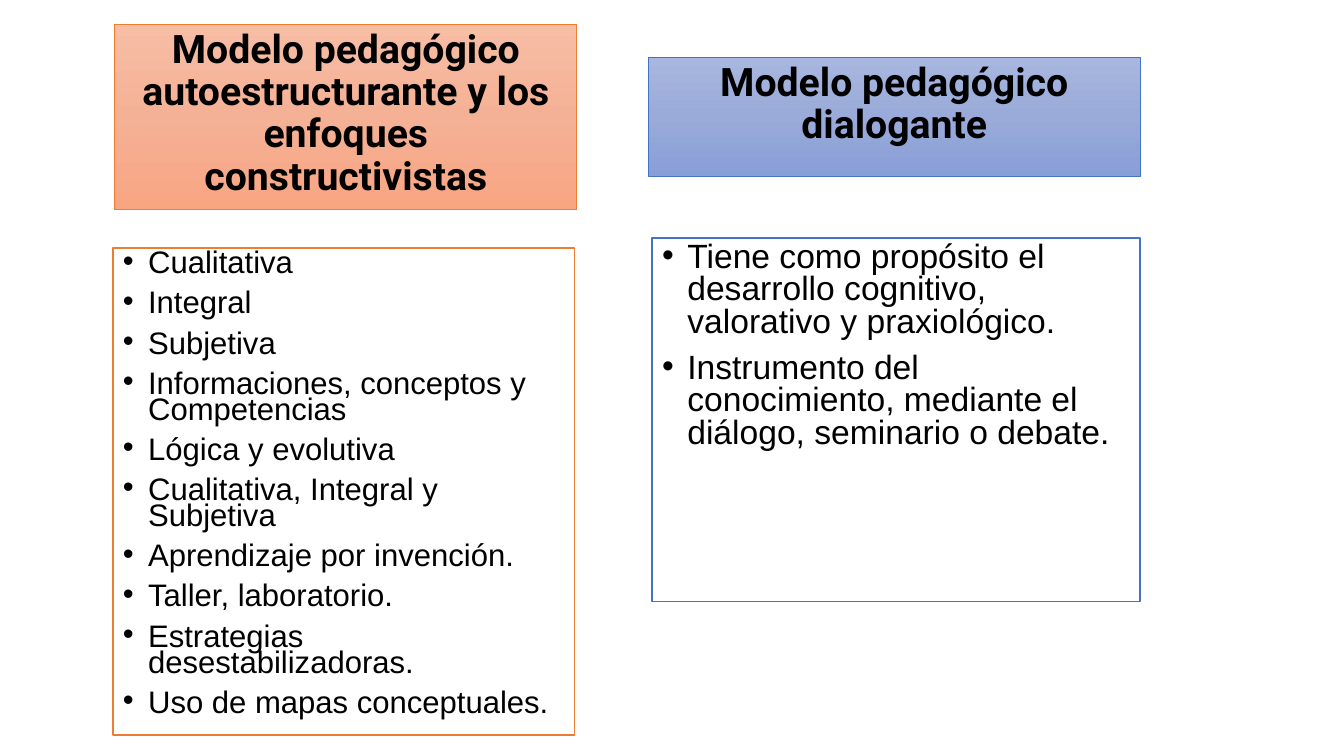
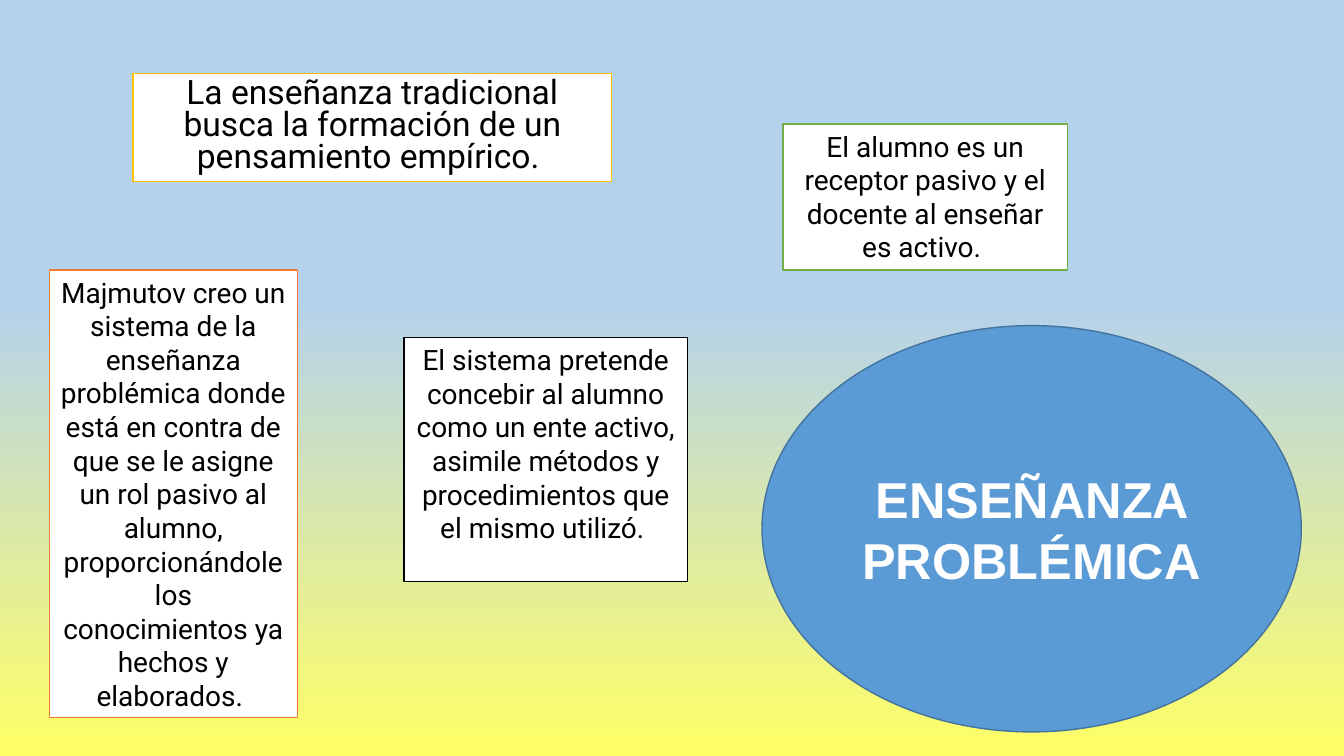
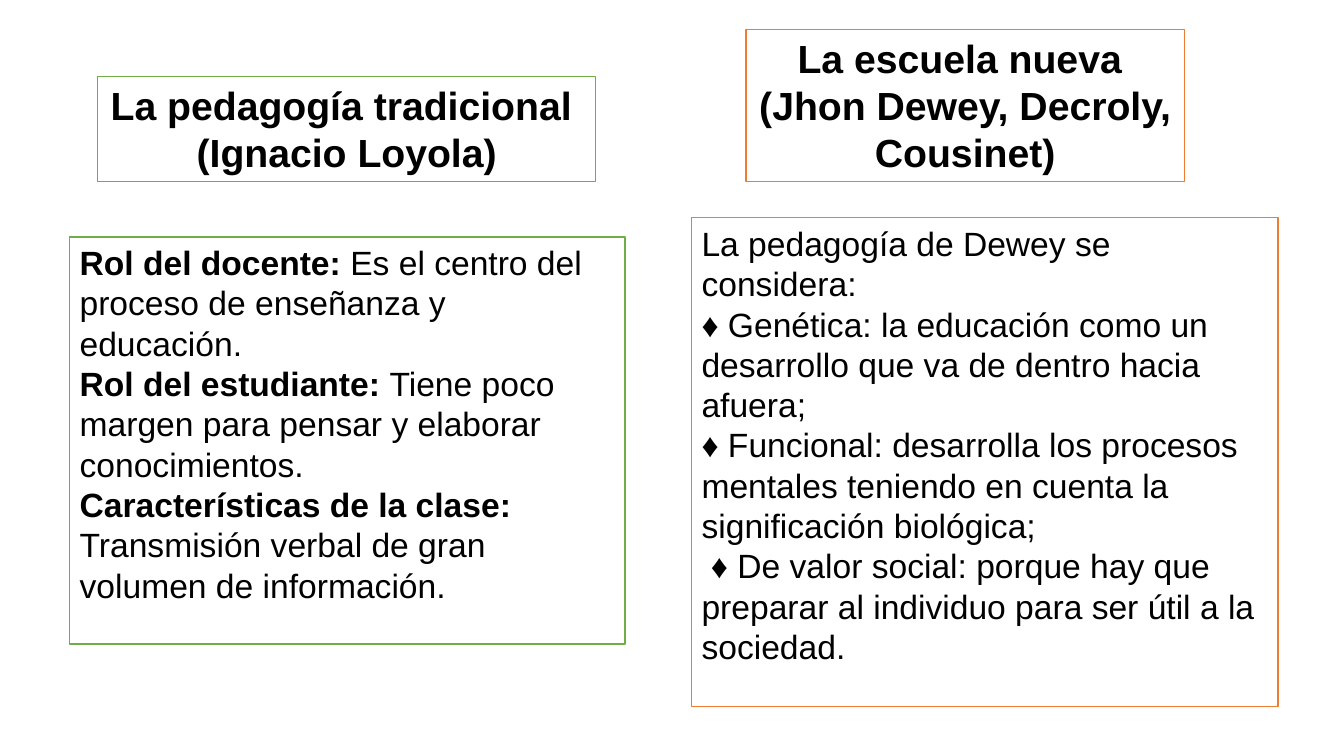
"""Build three slides that compare pedagogical models."""
import copy

import lxml.etree
import pptx
import pptx.dml.color
import pptx.enum.shapes
import pptx.enum.text
import pptx.oxml.ns
import pptx.util

Pt = pptx.util.Pt
ORANGE, BLUE, GREEN, YELLOW = "ED7D31", "4472C4", "70AD47", "FFC000"
BLACK, WHITE = "000000", "FFFFFF"


def paint(fill, colour):
    """Fill with one hex colour or with a list of (percent, hex) stops from top to bottom."""
    if isinstance(colour, str):
        fill.solid()
        fill.fore_color.rgb = pptx.dml.color.RGBColor.from_string(colour)
        return
    fill.gradient()
    fill.gradient_angle = 270
    first = fill.gradient_stops[0]._gs
    for _ in colour[2:]:
        first.getparent().append(copy.deepcopy(first))
    for stop, (percent, value) in zip(fill.gradient_stops, colour):
        stop.position = percent / 100
        stop.color.rgb = pptx.dml.color.RGBColor.from_string(value)


def write(sp, at, lines, size=24, font="Arial", colour=BLACK, bold=False, center=False,
          middle=False, wrap=True, spacing=1.0, before=0, bullet=False,
          fill=WHITE, line=None, width=1):
    """Place a box and write its lines; text before a | is bold."""
    sp.left, sp.top, sp.width, sp.height = [Pt(v) for v in at]
    if fill:
        paint(sp.fill, fill)
    if line:
        paint(sp.line.fill, line)
        sp.line.width = Pt(width)
    tf = sp.text_frame
    tf.word_wrap = wrap
    tf.auto_size = pptx.enum.text.MSO_AUTO_SIZE.NONE
    tf.vertical_anchor = getattr(pptx.enum.text.MSO_ANCHOR, "MIDDLE" if middle else "TOP")
    tf.margin_left = tf.margin_right = Pt(7.2)
    tf.margin_top = tf.margin_bottom = Pt(3.6)
    for i, text in enumerate(lines):
        p = tf.add_paragraph() if i else tf.paragraphs[0]
        p.alignment = getattr(pptx.enum.text.PP_ALIGN, "CENTER" if center else "LEFT")
        p.line_spacing = spacing
        p.space_before = Pt(before)
        p.space_after = Pt(0)
        pPr = p._p.get_or_add_pPr()
        indent = Pt(18) if bullet else 0
        pPr.set("marL", str(indent))
        pPr.set("indent", str(-indent))
        if bullet:
            lxml.etree.SubElement(pPr, pptx.oxml.ns.qn("a:buFont")).set("typeface", "Arial")
            lxml.etree.SubElement(pPr, pptx.oxml.ns.qn("a:buChar")).set("char", "•")
        else:
            lxml.etree.SubElement(pPr, pptx.oxml.ns.qn("a:buNone"))
        lead, _, rest = text.rpartition("|")
        for part, strong in ((lead, True), (rest, bold)):
            if part:
                r = p.add_run()
                r.text = part
                r.font.name = font
                r.font.size = Pt(size)
                r.font.bold = strong
                paint(r.font.fill, colour)


prs = pptx.Presentation()
prs.slide_width, prs.slide_height = Pt(960), Pt(540)
title_only, two_content = prs.slide_layouts[5], prs.slide_layouts[3]
heading = dict(size=28, bold=True, center=True)

s = prs.slides.add_slide(two_content)
model = dict(heading, font="Roboto", spacing=0.9, before=10, width=0.5)
points = dict(bullet=True, before=10)
write(s.shapes.title, (82, 17.3, 330, 132.5),
      ["Modelo pedagógico autoestructurante y los enfoques constructivistas"],
      fill=[(0, "F7BDA5"), (50, "F5B196"), (100, "F8A582")], line=ORANGE, **model)
write(s.placeholders[1], (80.6, 177.1, 329.8, 347.8), [
    "Cualitativa",
    "Integral",
    "Subjetiva",
    "Informaciones, conceptos y Competencias",
    "Lógica y evolutiva",
    "Cualitativa, Integral y Subjetiva",
    "Aprendizaje por invención.",
    "Taller, laboratorio.",
    "Estrategias desestabilizadoras.",
    "Uso de mapas conceptuales.",
], size=22.2, spacing=0.7, line=ORANGE, **points)
write(s.shapes.add_textbox(0, 0, 0, 0), (463, 41, 351.4, 85), ["Modelo pedagógico dialogante"],
      fill=[(0, "A8B7DF"), (50, "9AABD9"), (100, "889ED7")], line=BLUE, **model)
write(s.placeholders[2], (465.8, 169.9, 348.5, 259.9), [
    "Tiene como propósito el desarrollo cognitivo, valorativo y praxiológico.",
    "Instrumento del conocimiento, mediante el diálogo, seminario o debate.",
], spacing=0.8, line=BLUE, **points)

s = prs.slides.add_slide(title_only)
paint(s.background.fill, [(7, "B5D2EC"), (40, "B5D2EC"), (100, "FFFF66")])
oval_at = (544.3, 232.6, 385.2, 290.2)
oval = s.shapes.add_shape(pptx.enum.shapes.MSO_SHAPE.OVAL, *[Pt(v) for v in oval_at])
oval.shadow.inherit = False
paint(oval.fill, "5B9BD5")
paint(oval.line.fill, "43739E")
oval.line.width = Pt(1)
s.shapes._spTree.insert(2, oval._element)
write(s.shapes.title, (600.7, 275.1, 272.4, 205.2), ["ENSEÑANZA PROBLÉMICA"], size=36,
      colour=WHITE, bold=True, center=True, middle=True, fill=None)
for at, text, line, size, spacing in [
    ((95, 52.6, 342, 77),
     "La enseñanza tradicional busca la formación de un pensamiento empírico. ",
     YELLOW, 24, 0.8),
    ((559.4, 88.6, 203, 104.4),
     "El alumno es un receptor pasivo y el docente al enseñar es activo. ",
     GREEN, 20, 1.0),
    ((35.3, 193, 177.1, 319.7),
     "Majmutov creo un sistema de la enseñanza problémica donde está en contra de que se le "
     "asigne un rol pasivo al alumno, proporcionándole los conocimientos ya hechos y elaborados. ",
     ORANGE, 20, 1.0),
    ((288.7, 241.2, 202.3, 174.2),
     "El sistema pretende concebir al alumno como un ente activo, asimile métodos y "
     "procedimientos que el mismo utilizó. ",
     BLACK, 20, 1.0),
]:
    write(s.shapes.add_textbox(0, 0, 0, 0), at, [text], size=size, font="Roboto",
          center=True, spacing=spacing, line=line)

s = prs.slides.add_slide(two_content)
write(s.shapes.title, (69.8, 54.7, 355.7, 74.9),
      ["La pedagogía tradicional ", "(Ignacio Loyola)"], wrap=False, line=GREEN, **heading)
write(s.placeholders[1], (49.7, 169.2, 396.7, 290.9), [
    "Rol del docente: |Es el centro del proceso de enseñanza y educación.",
    "Rol del estudiante: |Tiene poco margen para pensar y elaborar conocimientos.",
    "Características de la clase: |Transmisión verbal de gran volumen de información.",
], line=GREEN)
write(s.shapes.add_textbox(0, 0, 0, 0), (532.8, 20.9, 313.2, 108.7),
      ["La escuela nueva ", "(Jhon Dewey, Decroly, Cousinet)"], line=ORANGE, **heading)
write(s.placeholders[2], (493.9, 155.5, 419, 349.2), [
    "La pedagogía de Dewey se considera:",
    "♦ Genética: la educación como un desarrollo que va de dentro hacia afuera;",
    "♦ Funcional: desarrolla los procesos mentales teniendo en cuenta la significación biológica;",
    " ♦ De valor social: porque hay que preparar al individuo para ser útil a la sociedad.",
], line=ORANGE)

prs.save("out.pptx")
